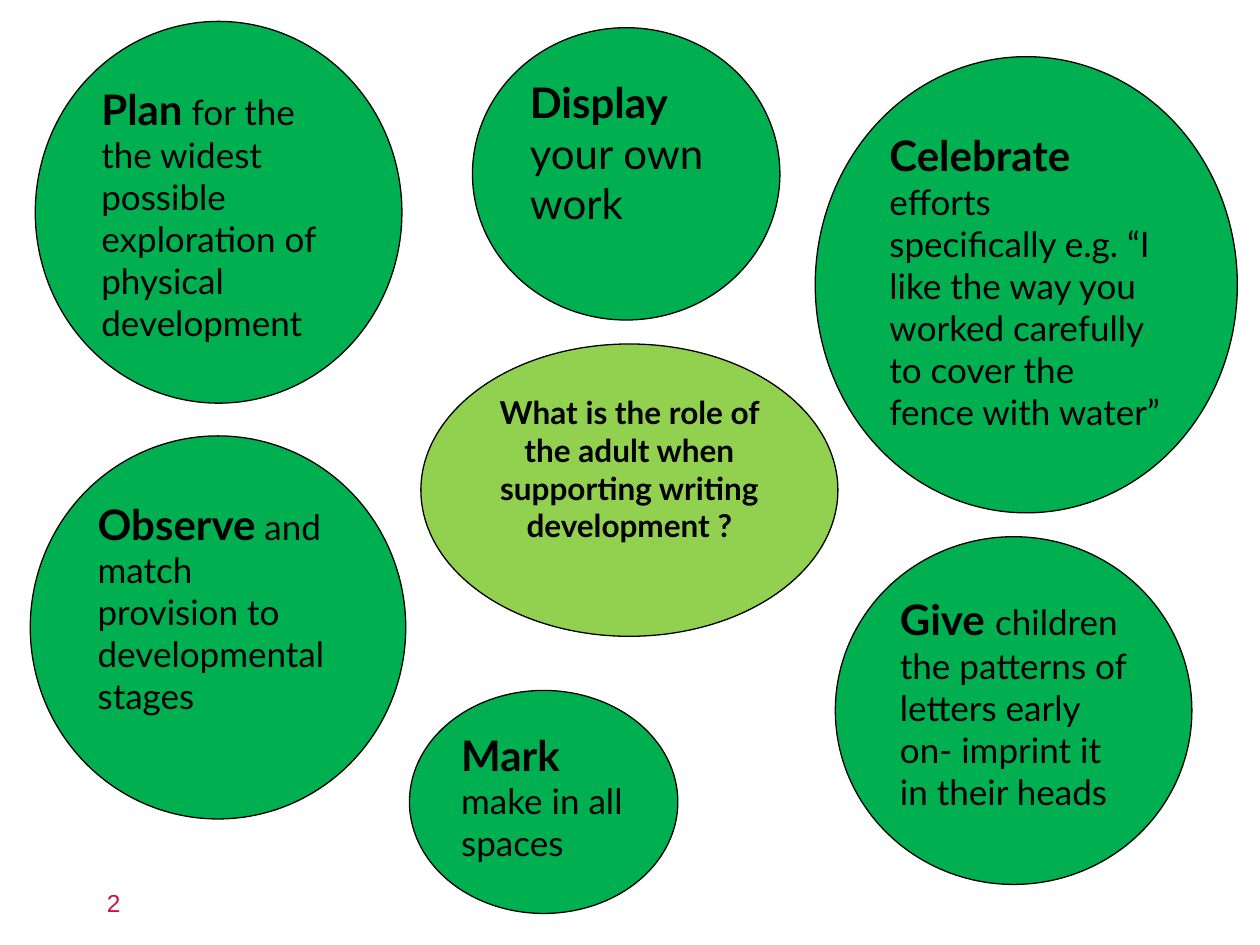
"""Build a slide of circles on the adult's role in writing development."""
import dataclasses

import pptx
import pptx.dml.color
import pptx.enum.shapes
import pptx.enum.text
import pptx.util


@dataclasses.dataclass(frozen=True)
class Theme:
    green: str = "00B050"
    lime: str = "92D050"
    black: str = "000000"
    red: str = "D00F44"
    font: str = "Lato"
    plain: str = "Arial"
    lead: int = 24
    body: int = 20
    core: int = 18
    small: int = 14
    edge: float = 0.75


theme = Theme()
rgb = pptx.dml.color.RGBColor.from_string
align = pptx.enum.text.PP_ALIGN
oval = pptx.enum.shapes.MSO_SHAPE.OVAL

deck = pptx.Presentation()
deck.slide_width = pptx.util.Inches(10)
deck.slide_height = pptx.util.Inches(7.5)
col = deck.slide_width / 100
row = deck.slide_height / 75
slide = deck.slides.add_slide(deck.slide_layouts[6])


def place(left, top, width, height):
    return [round(n) for n in (left * col, top * row, width * col, height * row)]


def write(shape, text, size=theme.body, bold=False, color=theme.black,
          font=theme.font, side=align.LEFT):
    frame = shape.text_frame
    frame.word_wrap = True
    frame.vertical_anchor = pptx.enum.text.MSO_ANCHOR.TOP
    line = frame.paragraphs[0]
    line.alignment = side
    run = line.add_run()
    run.text = text
    run.font.size = pptx.util.Pt(size)
    run.font.bold = bold
    run.font.name = font
    run.font.color.rgb = rgb(color)


number = slide.shapes.add_textbox(*place(7.5, 70, 20.8, 3.3))
write(number, "2", size=theme.small, color=theme.red, font=theme.plain)

rings = [
    ((33.4, 27.3, 33.1, 23.2), "",
     "What is the role of the adult when supporting writing development ?", theme.core),
    ((2.8, 1.7, 29.1, 30.3), "Plan",
     " for the the widest possible exploration of physical development", theme.body),
    ((32.5, 54.8, 21.3, 17.7), "Mark ", "make in all spaces", theme.body),
    ((2.4, 34.6, 29.8, 30.4), "Observe",
     " and match provision to developmental stages", theme.body),
    ((37.5, 2.2, 24.4, 23.2), "Display ", "your own work", theme.lead),
    ((64.7, 4.5, 33.5, 36.2), "Celebrate ",
     "efforts specifically e.g. “I like the way you worked carefully "
     "to cover the fence with water”", theme.body),
    ((66.3, 42.6, 28.3, 27.6), "Give ",
     "children the patterns of letters early on- imprint it in their heads", theme.body),
]

for spot, lead, rest, size in rings:
    ring = slide.shapes.add_shape(oval, *place(*spot))
    ring.shadow.inherit = False
    ring.fill.solid()
    ring.fill.fore_color.rgb = rgb(theme.green if lead else theme.lime)
    ring.line.color.rgb = rgb(theme.black)
    ring.line.width = pptx.util.Pt(theme.edge)
    if lead:
        write(ring, lead, size=theme.lead, bold=True)
        write(ring, rest, size=size)
    else:
        write(ring, rest, size=size, bold=True, side=align.CENTER)

deck.save("out.pptx")
